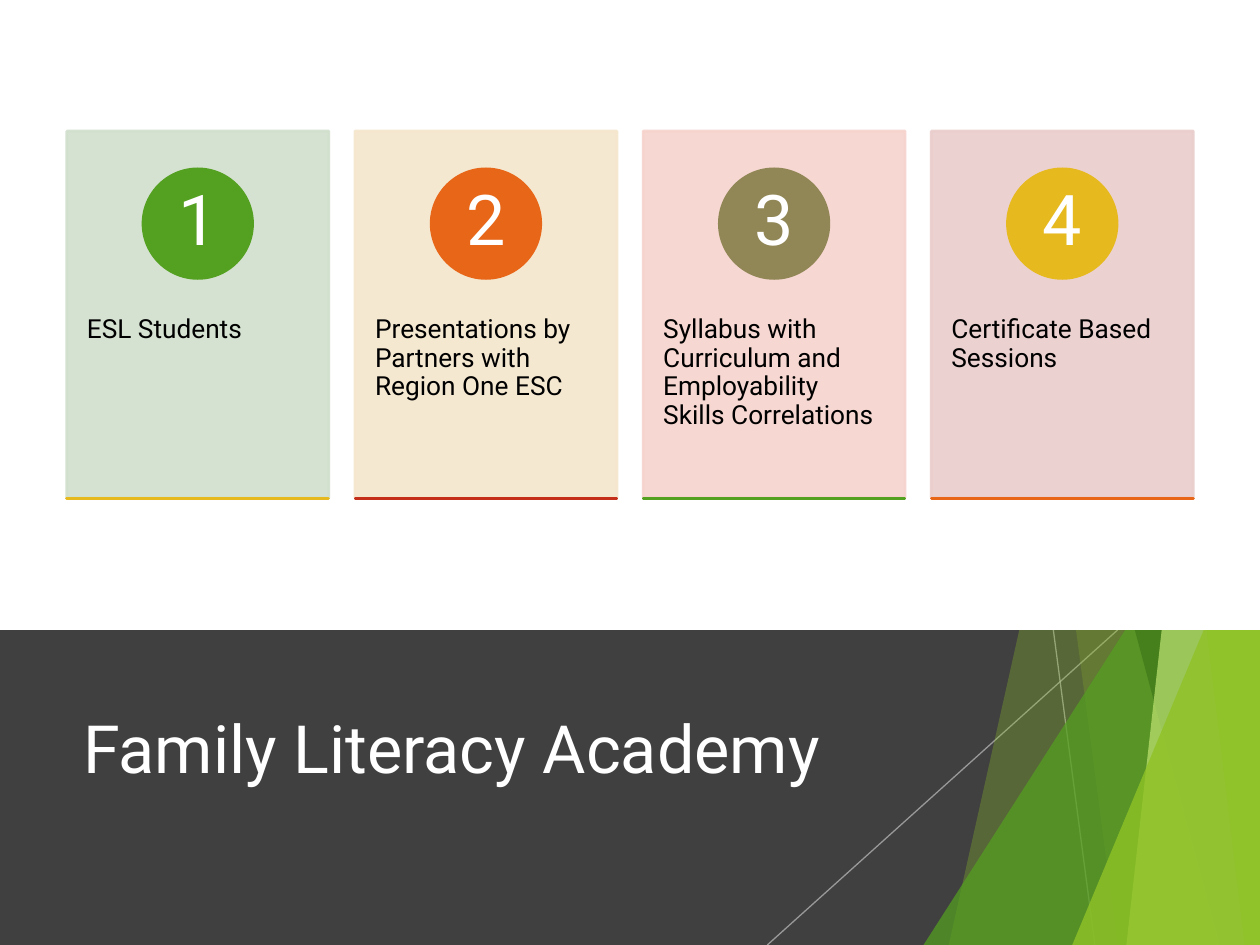
"""Build the Family Literacy Academy slide: four numbered cards over a dark title band."""
from lxml import etree
from pptx import Presentation
from pptx.dml.color import RGBColor
from pptx.enum.shapes import MSO_CONNECTOR, MSO_SHAPE
from pptx.enum.text import MSO_ANCHOR, MSO_AUTO_SIZE, PP_ALIGN
from pptx.oxml.ns import qn
from pptx.util import Inches, Pt

RECT, OVAL, PEAK = MSO_SHAPE.RECTANGLE, MSO_SHAPE.OVAL, MSO_SHAPE.ISOSCELES_TRIANGLE
LINE = MSO_CONNECTOR.STRAIGHT
TOP, MID = MSO_ANCHOR.TOP, MSO_ANCHOR.MIDDLE
LEFT, MIDDLE = PP_ALIGN.LEFT, PP_ALIGN.CENTER

deck = Presentation()
deck.slide_width, deck.slide_height = Inches(10), Inches(7.5)
col, row = deck.slide_width // 100, deck.slide_height // 75
slide = deck.slides.add_slide(deck.slide_layouts[5])
shapes = slide.shapes


def paint(shape, hue, alpha=100, edge=0):
    """Fill and outline a shape in one colour, without a shadow."""
    shape.shadow.inherit = False
    shape.fill.solid()
    shape.fill.fore_color.rgb = RGBColor.from_string(hue)
    if edge:
        shape.line.color.rgb = RGBColor.from_string(hue)
        shape.line.width = Pt(edge)
    else:
        shape.line.fill.background()
    if alpha < 100:
        for tint in shape.element.iter(qn("a:srgbClr")):
            etree.SubElement(tint, qn("a:alpha"), val=str(alpha * 1000))


def write(box, text, size, hue, anchor, align, pads, gap):
    """Put one run of text in a box with its insets and line spacing."""
    frame = box.text_frame
    frame.word_wrap, frame.auto_size = True, MSO_AUTO_SIZE.NONE
    frame.vertical_anchor = anchor
    frame.margin_left = frame.margin_right = Inches(pads[0])
    frame.margin_top = frame.margin_bottom = Inches(pads[1])
    para = frame.paragraphs[0]
    para.alignment, para.line_spacing = align, gap
    run = para.add_run()
    run.text = text
    run.font.name, run.font.size = "Roboto", Pt(size)
    run.font.color.rgb = RGBColor.from_string(hue)


band = shapes.add_shape(RECT, 0, 50 * row, 100 * col, 25 * row)
paint(band, "404040")

for head, foot in [(83.6, 86.9), (88.7, 60.9)]:
    ray = shapes.add_connector(LINE, int(head * col), 50 * row, int(foot * col), 75 * row)
    ray.line.color.rgb = RGBColor.from_string("BFBFBF")
    ray.line.width = Pt(0.75)
    for tint in ray.element.iter(qn("a:srgbClr")):
        etree.SubElement(tint, qn("a:alpha"), val="70000")
    etree.SubElement(ray.element.spPr, qn("a:effectLst"))

facets = [
    ("blade", 92.1, 75.3, "90C226", 30),
    ("blade", 78.8, 88.7, "90C226", 20),
    ("peak", 33.3, 73.3, "54A021", 72),
    ("blade", 76.6, 96.8, "3F7819", 70),
    ("blade", 97.8, 89.4, "C0E474", 70),
    ("blade", 89.7, 98.8, "90C226", 65),
    ("peak", 39.3, 85.1, "90C226", 80),
]
for kind, head, foot, hue, alpha in facets:
    if kind == "peak":
        facet = shapes.add_shape(PEAK, int(foot * col), int(head * row),
                                 int((100 - foot) * col), int((75 - head) * row))
        facet.adjustments[0] = 1
    else:
        path = shapes.build_freeform(int(head * col), 0)
        path.add_line_segments([(100 * col, 0), (100 * col, 75 * row),
                                (int(foot * col), 75 * row)], close=True)
        facet = path.convert_to_shape()
    paint(facet, hue, alpha)

title = shapes.title
title.left, title.top = int(5.6 * col), int(52.1 * row)
title.width, title.height = int(70.5 * col), int(14.4 * row)
write(title, "Family Literacy Academy", 38, "FFFFFF", MID, LEFT, (0.1, 0.05), 1.0)
title.element.getparent().append(title.element)

paper = shapes.add_shape(RECT, 0, 0, 100 * col, 50 * row)
paint(paper, "FFFFFF")

cards = [
    ("ESL Students", "D1DFCD", "54A021", "E6B91E"),
    ("Presentations by Partners with Region One ESC", "F5E6CD", "E76618", "C42F1A"),
    ("Syllabus with Curriculum and Employability Skills Correlations",
     "F6D3CC", "918655", "54A021"),
    ("Certificate Based Sessions", "EACDCD", "E6B91E", "E76618"),
]
wide, step = int(20.8 * col), 22.87
for spot, (text, back, disc, rule) in enumerate(cards):
    left = int((5.3 + spot * step) * col)
    card = shapes.add_shape(RECT, left, int(10.4 * row), wide, int(29.1 * row))
    paint(card, back, 90, 1.5)
    note = shapes.add_textbox(left, int(21.5 * row), wide, int(17.5 * row))
    write(note, text, 15, "000000", TOP, LEFT, (0.16, 0.36), 0.9)

    size = int(8.7 * col)
    dot = shapes.add_shape(OVAL, left + (wide - size) // 2, int(13.4 * row), size, size)
    paint(dot, disc, edge=1.5)
    size = int(6.2 * col)
    mark = shapes.add_textbox(left + (wide - size) // 2, int(14.6 * row), size, size)
    write(mark, str(spot + 1), 40, "FFFFFF", MID, MIDDLE, (0.07, 0.01), 0.9)

    base = shapes.add_shape(RECT, left, int(39.55 * row), wide, 0)
    paint(base, rule, edge=1.5)

deck.save("out.pptx")
